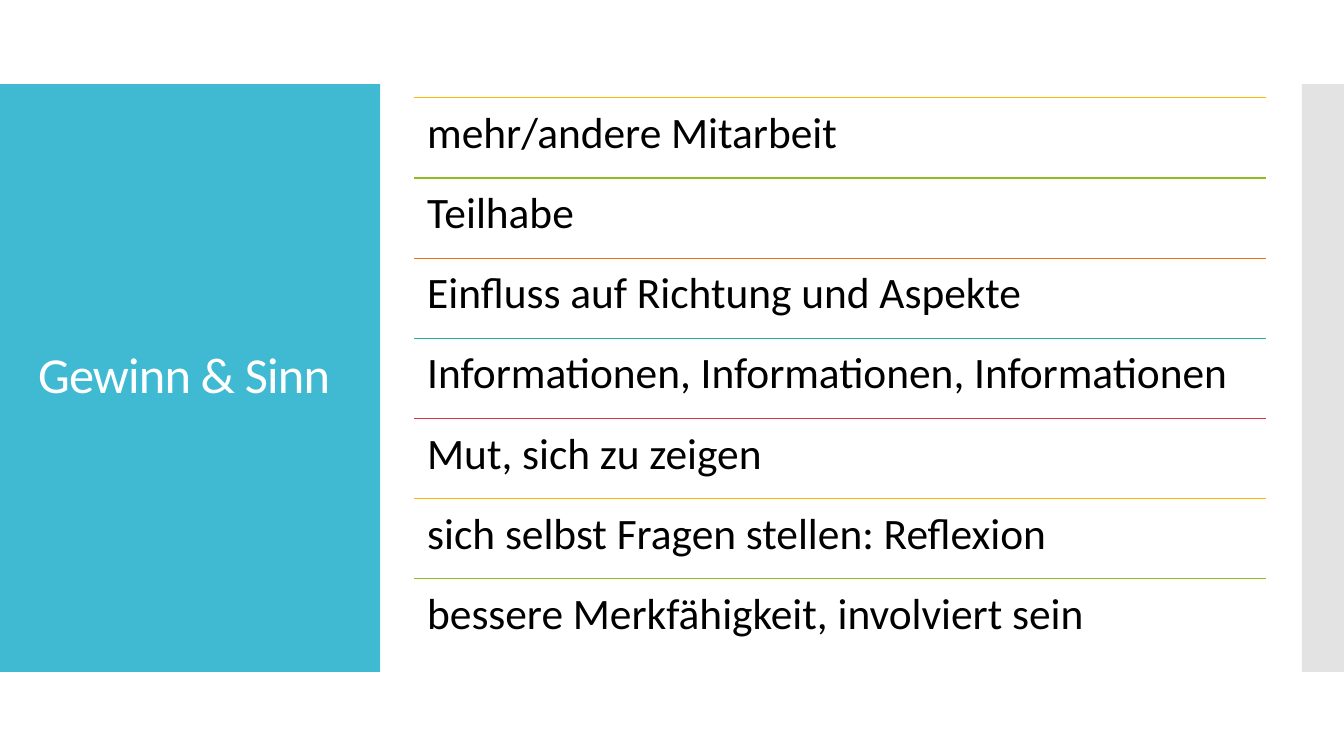
from dataclasses import dataclass

from lxml.etree import SubElement
from pptx import Presentation
from pptx.dml.color import RGBColor
from pptx.enum.shapes import MSO_CONNECTOR, MSO_SHAPE
from pptx.enum.text import MSO_ANCHOR
from pptx.oxml.ns import qn
from pptx.util import Inches, Pt


@dataclass(frozen=True)
class Theme:
    font: str = "Calibri"
    panel: str = "40BAD2"
    edge: str = "C8C8C8"
    title: str = "FFFFFF"
    body: str = "000000"
    rules: tuple = ("FAB900", "90BB23", "EE7008", "1AB39F", "D5393D")
    title_size: float = 36
    body_size: float = 31
    rule_width: float = 0.85


COLUMNS, ROWS = 32, 18
BENEFITS = (
    "mehr/andere Mitarbeit",
    "Teilhabe",
    "Einfluss auf Richtung und Aspekte",
    "Informationen, Informationen, Informationen",
    "Mut, sich zu zeigen",
    "sich selbst Fragen stellen: Reflexion",
    "bessere Merkfähigkeit, involviert sein",
)


def write_text(frame, text, *, font, size, color, anchor=MSO_ANCHOR.TOP, inset=0.1, spacing=0):
    frame.word_wrap = True
    frame.vertical_anchor = anchor
    frame.margin_left = frame.margin_right = Inches(inset)
    frame.margin_top = frame.margin_bottom = Inches(inset)
    para = frame.paragraphs[0]
    para.line_spacing = 0.9
    span = para.add_run()
    span.text = text
    span.font.name = font
    span.font.size = Pt(size)
    span.font.color.rgb = RGBColor.from_string(color)
    if spacing:
        span.font._element.set("spc", str(round(spacing * 100)))


class SlideBuilder:
    def __init__(self, deck, theme):
        self.theme = theme
        self.page = deck.slides.add_slide(deck.slide_layouts[6])
        self.column = deck.slide_width / COLUMNS
        self.row = deck.slide_height / ROWS

    def place(self, left, top, width, height):
        return (
            round(left * self.column),
            round(top * self.row),
            round(width * self.column),
            round(height * self.row),
        )

    def panel(self, area, color, opacity=100):
        box = self.page.shapes.add_shape(MSO_SHAPE.RECTANGLE, *self.place(*area))
        box.shadow.inherit = False
        box.fill.solid()
        box.fill.fore_color.rgb = RGBColor.from_string(color)
        box.line.fill.background()
        if opacity < 100:
            tint = box._element.spPr.find(qn("a:solidFill"))[0]
            SubElement(tint, qn("a:alpha")).set("val", str(opacity * 1000))

    def text(self, area, text, **style):
        box = self.page.shapes.add_textbox(*self.place(*area))
        write_text(box.text_frame, text, font=self.theme.font, **style)

    def rule(self, left, top, width, color):
        x, y, length, _ = self.place(left, top, width, 0)
        line = self.page.shapes.add_connector(MSO_CONNECTOR.STRAIGHT, x, y, x + length, y)
        line.line.color.rgb = RGBColor.from_string(color)
        line.line.width = Pt(self.theme.rule_width)
        SubElement(line._element.spPr, qn("a:effectLst"))

    def ruled_list(self, area, items):
        left, top, width, height = area
        pitch = height / len(items)
        for index, item in enumerate(items):
            item_top = top + index * pitch
            color = self.theme.rules[index % len(self.theme.rules)]
            self.rule(left, item_top, width, color)
            self.text(
                (left, item_top, width, pitch),
                item,
                size=self.theme.body_size,
                color=self.theme.body,
                inset=0.13,
            )


def main():
    deck = Presentation()
    deck.slide_width = Inches(40 / 3)
    deck.slide_height = Inches(7.5)
    theme = Theme()
    builder = SlideBuilder(deck, theme)
    builder.panel((0, 2, 9.05, 14), theme.panel)
    builder.panel((31, 2, 1, 14), theme.edge, opacity=50)
    builder.text(
        (0.67, 2.95, 7.73, 12.07),
        "Gewinn & Sinn",
        size=theme.title_size,
        color=theme.title,
        anchor=MSO_ANCHOR.MIDDLE,
        spacing=-0.6,
    )
    builder.ruled_list((9.86, 2.33, 20.28, 13.36), BENEFITS)
    deck.save("out.pptx")


if __name__ == "__main__":
    main()
